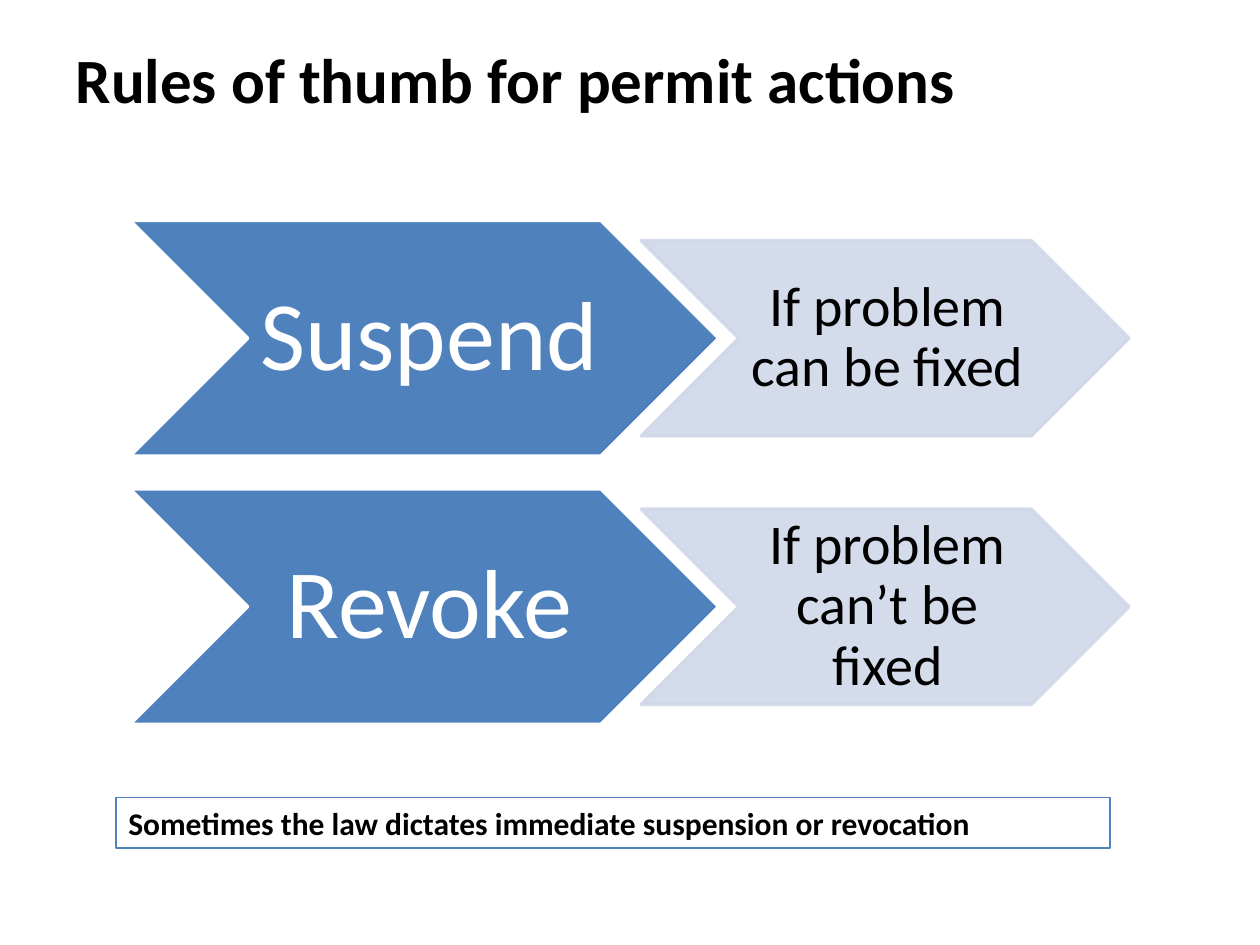
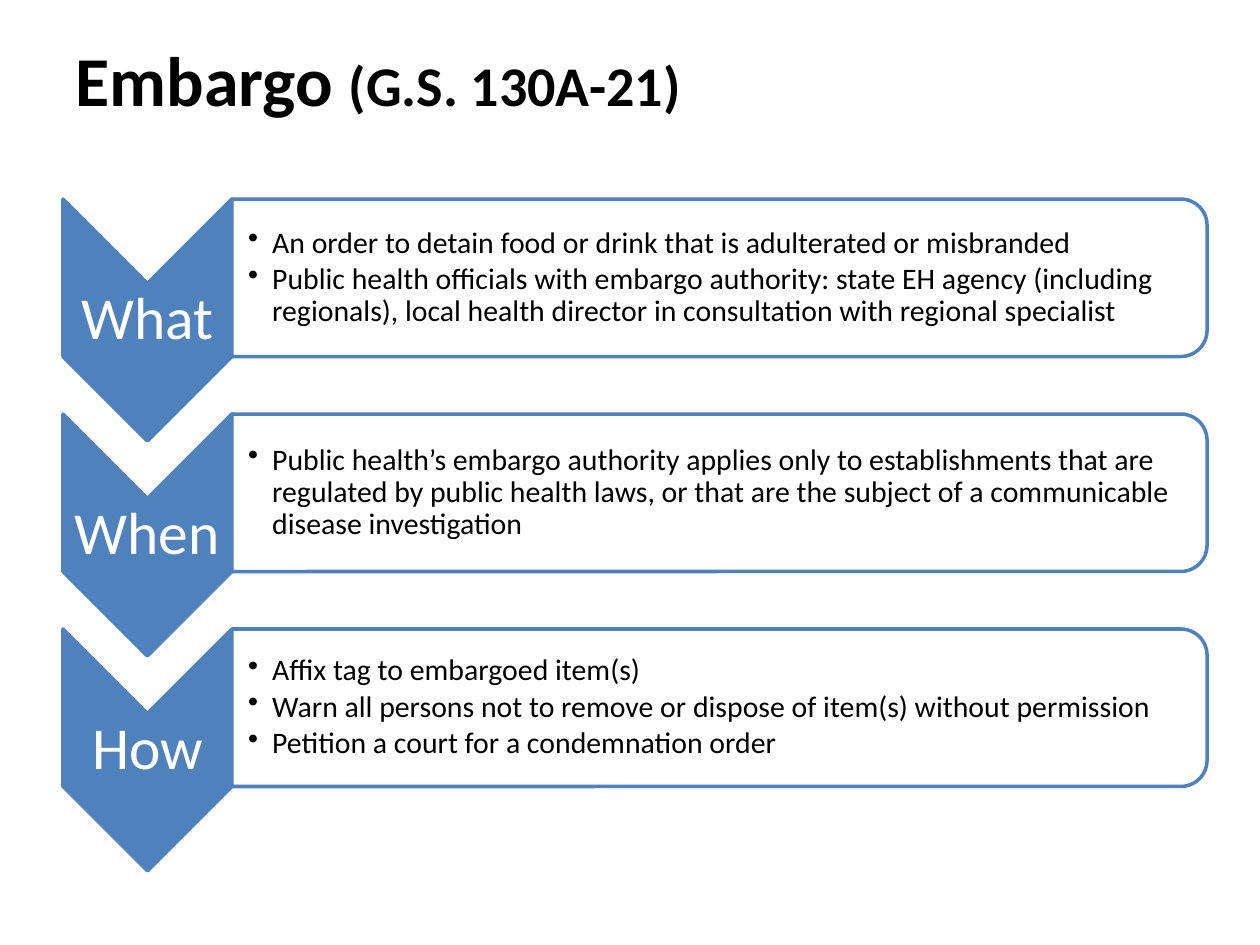
import pptx
import pptx.dml.color
import pptx.enum.shapes
import pptx.enum.text
import pptx.oxml
import pptx.oxml.ns
import pptx.util

SHAPE = pptx.enum.shapes.MSO_SHAPE
ALIGN = pptx.enum.text.PP_ALIGN
ANCHOR = pptx.enum.text.MSO_ANCHOR

# Grid of 100 columns by 75 rows with square cells
SLIDE_WIDTH, SLIDE_HEIGHT = pptx.util.Inches(10), pptx.util.Inches(7.5)
CELL = SLIDE_WIDTH / 100

FONT = "Calibri"
BLUE, PALE, WHITE, BLACK = "4F81BD", "D0D8E8", "FFFFFF", "000000"
SIDES = ("margin_left", "margin_top", "margin_right", "margin_bottom")
TITLE_BOX = (5, 0, 90, 12.5)
PERMIT_ACTIONS = [
    ("Suspend", "If problem can be fixed"),
    ("Revoke", "If problem can’t be fixed"),
]
EMBARGO_STEPS = [
    ("What", [
        "An order to detain food or drink that is adulterated or misbranded",
        "Public health officials with embargo authority: state EH agency "
        "(including regionals), local health director in consultation with "
        "regional specialist",
    ]),
    ("When", [
        "Public health’s embargo authority applies only to establishments "
        "that are regulated by public health laws, or that are the subject "
        "of a communicable disease investigation",
    ]),
    ("How", [
        "Affix tag to embargoed item(s)",
        "Warn all persons not to remove or dispose of item(s) without permission",
        "Petition a court for a condemnation order",
    ]),
]


def cells(count):
    return pptx.util.Emu(round(count * CELL))


def rgb(hex_value):
    return pptx.dml.color.RGBColor.from_string(hex_value)


def apply(target, values):
    for name, value in values.items():
        setattr(target, name, value)


def set_font(font, size, color=BLACK, bold=False):
    apply(font, {"name": FONT, "size": pptx.util.Pt(size), "bold": bold})
    font.color.rgb = rgb(color)


def set_frame(frame, insets):
    apply(frame, {"word_wrap": True, "vertical_anchor": ANCHOR.MIDDLE})
    apply(frame, dict(zip(SIDES, map(cells, insets))))


def add_shape(slide, kind, box, fill, line, width=2, rotation=0):
    """Draw a shape that covers the box after its quarter turn, if any."""
    left, top, wide, high = box
    if rotation:
        left, top = left + (wide - high) / 2, top + (high - wide) / 2
        wide, high = high, wide
    shape = slide.shapes.add_shape(kind, *map(cells, (left, top, wide, high)))
    shape.rotation = rotation
    shape.shadow.inherit = False
    if fill:
        shape.fill.solid()
        shape.fill.fore_color.rgb = rgb(fill)
    else:
        shape.fill.background()
    shape.line.color.rgb = rgb(line)
    shape.line.width = pptx.util.Pt(width)
    return shape


def make_translucent(shape, *color_holders):
    for holder in color_holders:
        for color in shape._element.spPr.xpath(f"{holder}/a:srgbClr"):
            alpha = pptx.oxml.parse_xml(
                f'<a:alpha {pptx.oxml.ns.nsdecls("a")} val="90000"/>')
            color.append(alpha)


def add_label(slide, box, text, size, color, insets):
    frame = slide.shapes.add_textbox(*map(cells, box)).text_frame
    set_frame(frame, insets)
    label = frame.paragraphs[0]
    label.text = text
    apply(label, {"alignment": ALIGN.CENTER, "line_spacing": 0.9})
    set_font(label.font, size, color)


def add_bullets(slide, box, items, size):
    frame = slide.shapes.add_textbox(*map(cells, box)).text_frame
    set_frame(frame, (1.3, 0.1, 0.1, 0.1))
    for index, item in enumerate(items):
        bullet = frame.add_paragraph() if index else frame.paragraphs[0]
        bullet.text = item
        properties = bullet._p.get_or_add_pPr()
        properties.set("marL", str(cells(1.9)))
        properties.set("indent", str(-cells(1.9)))
        properties.append(pptx.oxml.parse_xml(
            f'<a:buChar {pptx.oxml.ns.nsdecls("a")} char="•"/>'))
        apply(bullet, {"level": 1, "line_spacing": 0.9})
        if index:
            bullet.space_before = pptx.util.Pt(0.15 * size)
        set_font(bullet.font, size)


def add_titled_slide(deck, *title_runs):
    slide = deck.slides.add_slide(deck.slide_layouts.get_by_name("Title Only"))
    title = slide.shapes.title
    apply(title, dict(zip(("left", "top", "width", "height"),
                          map(cells, TITLE_BOX))))
    set_frame(title.text_frame, (1, 0.5, 1, 0.5))
    heading = title.text_frame.paragraphs[0]
    heading.alignment = ALIGN.LEFT
    for text, size in title_runs:
        run = heading.add_run()
        run.text = text
        set_font(run.font, size, bold=True)
    return slide


def add_action_row(slide, box, action, condition):
    left, top, width, height = box
    condition_width, condition_height = 38.7, 15.5
    # Action chevron, then the smaller condition chevron at the right edge
    lead = (left, top, 2.5 * height, height)
    follow = (left + width - condition_width,
              top + (height - condition_height) / 2,
              condition_width, condition_height)
    parts = [
        (lead, BLUE, WHITE, action, 56, WHITE, (0.8, 0.4, 0, 0.4)),
        (follow, PALE, PALE, condition, 32, BLACK, (0.4, 0.2, 0, 0.2)),
    ]
    for (x, y, w, h), fill, line, text, size, color, insets in parts:
        chevron = add_shape(slide, SHAPE.CHEVRON, (x, y, w, h), fill, line)
        if fill == PALE:
            make_translucent(chevron, "a:solidFill", "a:ln/a:solidFill")
        add_label(slide, (x + h / 2, y, w - h, h), text, size, color, insets)


def add_note(slide, box, text):
    frame = add_shape(slide, SHAPE.RECTANGLE, box, None, BLUE, 0.75).text_frame
    set_frame(frame, (1, 0.5, 1, 0.5))
    note = frame.paragraphs[0]
    note.text = text
    note.alignment = ALIGN.LEFT
    set_font(note.font, 18, bold=True)


def add_step(slide, box, name, items):
    left, top, width, height = box
    chevron_width, panel_height = 13.4, 12.5
    panel_left, panel_width = left + chevron_width, width - chevron_width
    # Downward chevron with the step's name
    add_shape(slide, SHAPE.CHEVRON, (left, top, chevron_width, height),
              BLUE, BLUE, rotation=90)
    add_label(slide, (left, top + chevron_width / 2, chevron_width,
                      height - chevron_width), name, 34, WHITE, [0.2] * 4)
    # Panel with the details
    panel = add_shape(slide, SHAPE.ROUND_2_SAME_RECTANGLE,
                      (panel_left, top, panel_width, panel_height),
                      WHITE, BLUE, rotation=90)
    make_translucent(panel, "a:solidFill")
    add_bullets(slide, (panel_left, top + 0.6, panel_width - 0.6,
                        panel_height - 1.2), items, 17)


def build_permit_slide(deck):
    slide = add_titled_slide(deck, ("Rules of thumb for permit actions", 36))
    for row, (action, condition) in enumerate(PERMIT_ACTIONS):
        add_action_row(slide, (10.3, 17.5 + 21.3 * row, 79.3, 18.7),
                       action, condition)
    add_note(slide, (9.2, 63.3, 78.9, 4),
             "Sometimes the law dictates immediate suspension or revocation")


def build_embargo_slide(deck):
    slide = add_titled_slide(deck, ("Embargo ", 40), ("(G.S. 130A-21)", 32))
    for row, (name, items) in enumerate(EMBARGO_STEPS):
        add_step(slide, (5, 15.8 + 17.06 * row, 90.8, 19.2), name, items)


def main():
    deck = pptx.Presentation()
    apply(deck, {"slide_width": SLIDE_WIDTH, "slide_height": SLIDE_HEIGHT})
    build_permit_slide(deck)
    build_embargo_slide(deck)
    deck.save("out.pptx")


if __name__ == "__main__":
    main()
